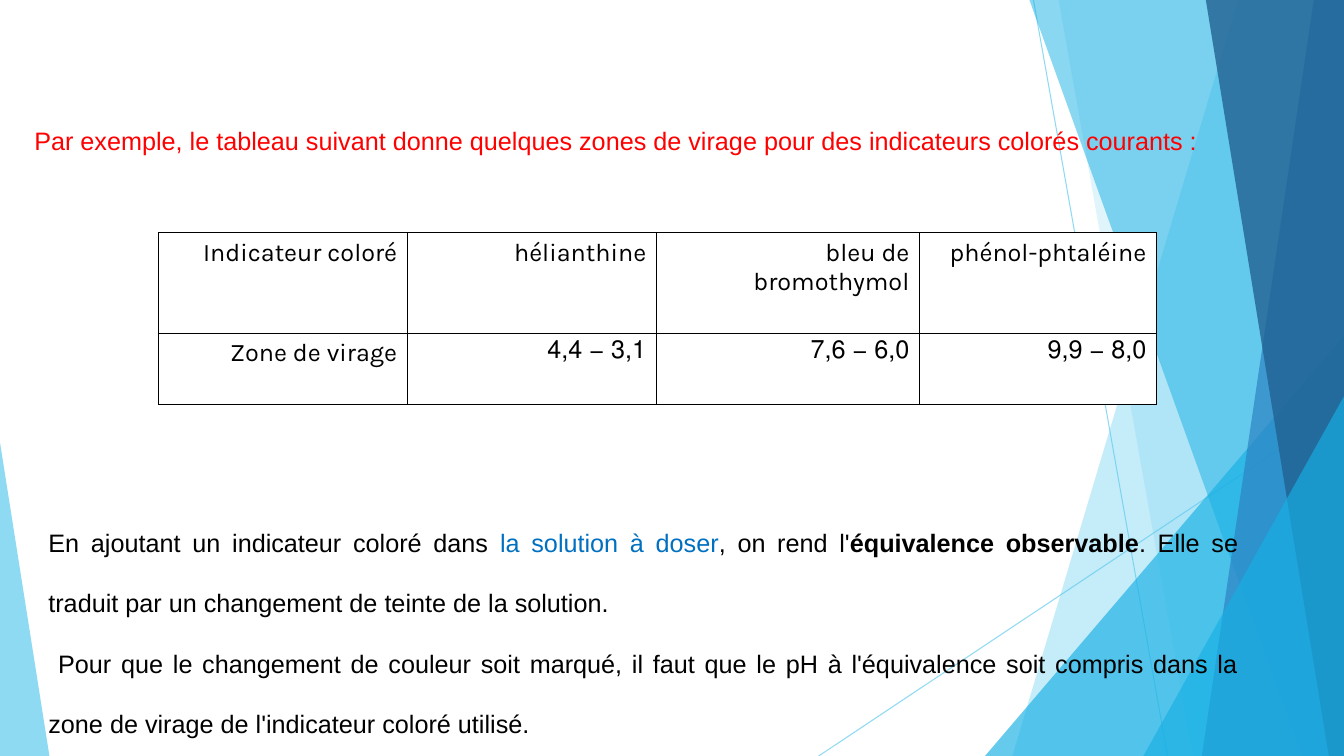
from lxml import etree
from pptx import Presentation
from pptx.dml.color import RGBColor
from pptx.enum.shapes import MSO_CONNECTOR, MSO_SHAPE
from pptx.enum.text import MSO_ANCHOR, PP_ALIGN
from pptx.oxml.ns import qn
from pptx.util import Inches, Pt

LEFT, RIGHT, JUST = PP_ALIGN.LEFT, PP_ALIGN.RIGHT, PP_ALIGN.JUSTIFY
TOP = MSO_ANCHOR.TOP
TRIANGLE = MSO_SHAPE.ISOSCELES_TRIANGLE
STRAIGHT = MSO_CONNECTOR.STRAIGHT

COLORS = {
    "sky": "5FCBEF", "cyan": "17B0E4", "blue": "2E83C3", "navy": "226292",
    "black": "000000", "white": "FFFFFF", "red": "FF0000", "link": "0070C0",
}
WIDE, HIGH = 13.33, 7.5

ROWS = [
    ["Indicateur coloré", "hélianthine", "bleu de bromothymol", "phénol-phtaléine"],
    ["Zone de virage", "3,1\u00a0−\u00a04,4", "6,0\u00a0−\u00a07,6", "8,0\u00a0−\u00a09,9"],
]
COLS = [2.47, 2.47, 2.61, 2.35]
HEIGHTS = [1, 0.7]


def rgb(name):
    return RGBColor.from_string(COLORS[name])


def fade(fill, percent):
    """Give a solid fill its opacity."""
    color = fill.find(".//" + qn("a:srgbClr"))
    etree.SubElement(color, qn("a:alpha"), val=str(percent * 1000))


def paint(shape, color, percent):
    shape.shadow.inherit = False
    shape.fill.solid()
    shape.fill.fore_color.rgb = rgb(color)
    fade(shape._element.spPr.find(qn("a:solidFill")), percent)
    shape.line.fill.background()


def add_ray(group, start, end):
    ray = group.shapes.add_connector(STRAIGHT, *map(Inches, start + end))
    ray.line.color.rgb = rgb("sky")
    ray.line.width = Pt(0.75)
    props = ray._element.spPr
    fade(props.find(qn("a:ln")), 70)
    etree.SubElement(props, qn("a:effectLst"))


def add_band(group, top, foot, color, percent):
    """Fill from a slanted edge to the right side of the slide."""
    form = group.shapes.build_freeform(Inches(top), 0)
    points = [(WIDE, 0), (WIDE, HIGH), (foot, HIGH)]
    form.add_line_segments([(Inches(x), Inches(y)) for x, y in points])
    paint(form.convert_to_shape(), color, percent)


def add_wedge(group, left, top, width, peak, color, percent):
    wedge = group.shapes.add_shape(
        TRIANGLE, Inches(left), Inches(top), Inches(width), Inches(HIGH - top))
    wedge.adjustments[0] = peak
    paint(wedge, color, percent)


def add_text(para, text, font="Arial", size=18, color="black", bold=False,
             align=LEFT, space=1):
    para.alignment = align
    para.line_spacing = space
    para.space_before = Pt(0)
    run = para.add_run()
    run.text = text
    run.font.name = font
    run.font.size = Pt(size)
    run.font.bold = bold
    run.font.color.rgb = rgb(color)


def place(holder, left, top, width, height):
    holder.left, holder.top = Inches(left), Inches(top)
    holder.width, holder.height = Inches(width), Inches(height)
    frame = holder.text_frame
    frame.word_wrap = True
    frame.vertical_anchor = TOP
    return frame


def drop_bullet(para):
    props = para._p.get_or_add_pPr()
    props.set("marL", "0")
    props.set("indent", "0")
    etree.SubElement(props, qn("a:buNone"))


def add_edges(cell):
    props = cell._tc.get_or_add_tcPr()
    for side in ("lnL", "lnR", "lnT", "lnB"):
        edge = etree.SubElement(props, qn("a:" + side), w=str(Pt(0.75)))
        fill = etree.SubElement(edge, qn("a:solidFill"))
        etree.SubElement(fill, qn("a:srgbClr"), val=COLORS["black"])


def add_grid(slide, left, top):
    frame = slide.shapes.add_table(
        len(ROWS), len(COLS), Inches(left), Inches(top),
        Inches(sum(COLS)), Inches(sum(HEIGHTS)))
    table = frame.table
    table.first_row = table.horz_banding = False
    for col, width in zip(table.columns, COLS):
        col.width = Inches(width)
    for row, height, texts in zip(table.rows, HEIGHTS, ROWS):
        row.height = Inches(height)
        for cell, text in zip(row.cells, texts):
            add_edges(cell)
            cell.fill.solid()
            cell.fill.fore_color.rgb = rgb("white")
            para = cell.text_frame.paragraphs[0]
            add_text(para, text, font="Karla", align=RIGHT)
            # Right-to-left reading order
            para._p.get_or_add_pPr().set("rtl", "1")


def add_decor(slide):
    group = slide.shapes.add_group_shape()
    add_ray(group, (10.25, 0), (11.58, HIGH))
    add_ray(group, (WIDE, 4.03), (8.12, HIGH))
    add_band(group, 12.28, 10.04, "sky", 36)
    add_band(group, 10.5, 11.83, "sky", 20)
    add_wedge(group, 9.77, 3.33, 3.56, 1, "cyan", 66)
    add_band(group, 10.21, 12.91, "cyan", 50)
    add_band(group, 13.03, 11.92, "blue", 70)
    add_band(group, 11.96, 13.18, "navy", 80)
    add_wedge(group, 11.34, 3.93, 1.99, 1, "cyan", 66)
    add_wedge(group, 0, 4.39, 0.49, 0, "sky", 70)
    # Send behind the text
    slide.shapes._spTree.insert(2, group._element)


def main():
    prs = Presentation()
    prs.slide_width, prs.slide_height = Inches(WIDE), Inches(HIGH)
    slide = prs.slides.add_slide(prs.slide_layouts[1])
    add_decor(slide)

    # Heading
    head = place(slide.shapes.title, 0.24, 1.19, 11.85, 0.4)
    add_text(head.paragraphs[0],
             "Par exemple, le tableau suivant donne quelques zones de virage "
             "pour des indicateurs colorés courants\u00a0:", color="red")

    # Table of indicators
    add_grid(slide, 1.57, 2.31)

    # Explanation
    body = place(slide.placeholders[1], 0.38, 4.88, 12, 2.43)
    first, second = body.paragraphs[0], body.add_paragraph()
    parts = [
        (first, "En ajoutant un indicateur coloré dans ", {}),
        (first, "la solution à doser", {"color": "link"}),
        (first, ", on rend l'", {}),
        (first, "équivalence observable", {"bold": True}),
        (first, ". Elle se traduit par un changement de teinte de la solution.", {}),
        (second, " Pour que le changement de couleur soit marqué, il faut que le pH "
                 "à l'équivalence soit compris dans la zone de virage de "
                 "l'indicateur coloré utilisé.", {}),
    ]
    for para, text, style in parts:
        add_text(para, text, align=JUST, space=2, **style)
    for para in body.paragraphs:
        drop_bullet(para)

    prs.save("out.pptx")


if __name__ == "__main__":
    main()
